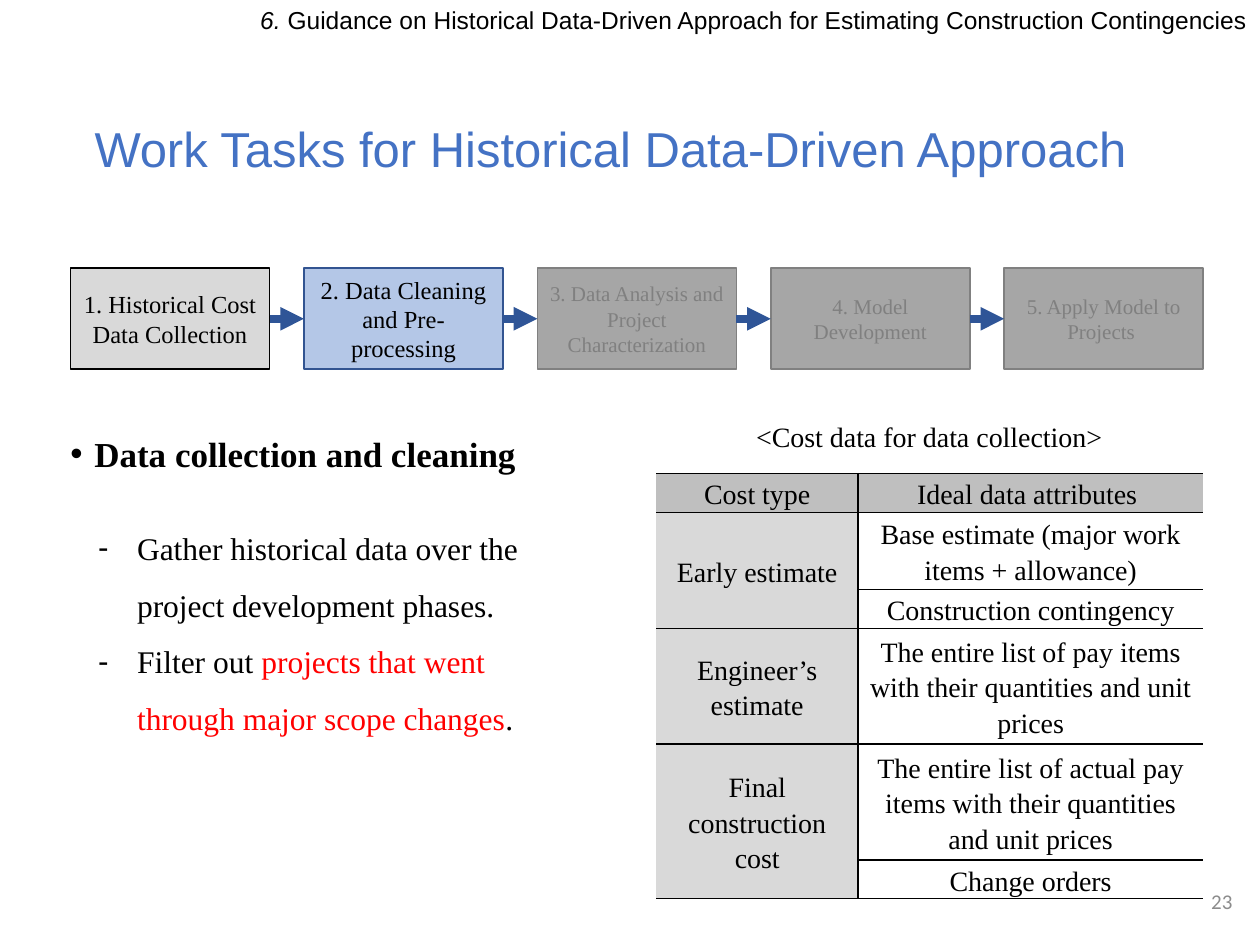
from lxml import etree
from pptx import Presentation
from pptx.dml.color import RGBColor
from pptx.enum.shapes import MSO_CONNECTOR, MSO_SHAPE
from pptx.enum.text import MSO_ANCHOR, MSO_AUTO_SIZE, PP_ALIGN
from pptx.oxml.ns import qn
from pptx.util import Inches, Pt

LEFT, CENTER, RIGHT = PP_ALIGN.LEFT, PP_ALIGN.CENTER, PP_ALIGN.RIGHT
TOP, MIDDLE = MSO_ANCHOR.TOP, MSO_ANCHOR.MIDDLE
SERIF = "Times New Roman"
BLACK, WHITE, RED = "000000", "FFFFFF", "FF0000"

# text, fill, outline, text colour, size
ACTIVE, PENDING = ("B4C7E7", "325491", BLACK, 14), ("A6A6A6", "808080", "808080", 12)
STEPS = [
    ("1. Historical Cost Data Collection", "D9D9D9", BLACK, BLACK, 14),
    ("2. Data Cleaning and Pre-processing", *ACTIVE),
    ("3. Data Analysis and Project Characterization", *PENDING),
    ("4. Model Development", *PENDING),
    ("5. Apply Model to Projects ", *PENDING),
]
# cost type (None continues the one above), attribute, row height
COST_ROWS = [
    ("Cost type", "Ideal data attributes ", 0.24),
    ("Early estimate", "Base estimate (major work items + allowance)", 0.5),
    (None, "Construction contingency", 0.24),
    ("Engineer’s estimate",
     "The entire list of pay items with their quantities and unit prices", 0.76),
    ("Final construction cost",
     "The entire list of actual pay items with their quantities and unit prices", 0.76),
    (None, "Change orders", 0.24),
]


def rgb(value):
    return RGBColor.from_string(value)


def style_run(run, size, color=BLACK, font=SERIF, bold=False, italic=False):
    run.font.size, run.font.name = Pt(size), font
    run.font.color.rgb = rgb(color)
    run.font.bold, run.font.italic = bold, italic


def write(paragraph, text, size, align=LEFT, **style):
    paragraph.text = text
    paragraph.alignment = align
    style_run(paragraph.runs[0], size, **style)


def add_bullet(paragraph, char, indent):
    props = paragraph._p.get_or_add_pPr()
    props.set("marL", str(Inches(indent)))
    props.set("indent", str(-Inches(indent)))
    etree.SubElement(props, qn("a:buFont")).set("typeface", "Arial")
    etree.SubElement(props, qn("a:buChar")).set("char", char)


def add_textbox(slide, box, anchor=TOP):
    frame = slide.shapes.add_textbox(*map(Inches, box)).text_frame
    frame.word_wrap = True
    frame.vertical_anchor = anchor
    return frame


def add_box(slide, box, fill, outline, width=1, anchor=MIDDLE):
    shape = slide.shapes.add_shape(MSO_SHAPE.RECTANGLE, *map(Inches, box))
    shape.shadow.inherit = False
    if fill:
        shape.fill.solid()
        shape.fill.fore_color.rgb = rgb(fill)
    else:
        shape.fill.background()
    shape.line.color.rgb = rgb(outline)
    shape.line.width = Pt(width)
    shape.text_frame.word_wrap = True
    shape.text_frame.vertical_anchor = anchor
    return shape


def add_header(slide, box):
    paragraph = add_textbox(slide, box).paragraphs[0]
    write(paragraph, "6. ", 14, RIGHT, font="Arial", italic=True)
    paragraph.line_spacing, paragraph.space_before = 0.9, Pt(10)
    section = paragraph.add_run()
    section.text = ("Guidance on Historical Data-Driven Approach "
                    "for Estimating Construction Contingencies")
    style_run(section, 14, font="Arial")


def add_title(slide, box):
    title = slide.shapes.title
    title.left, title.top, title.width, title.height = map(Inches, box)
    frame = title.text_frame
    frame.auto_size, frame.word_wrap = MSO_AUTO_SIZE.NONE, True
    frame.vertical_anchor = MIDDLE
    paragraph = frame.paragraphs[0]
    write(paragraph, "Work Tasks for Historical Data-Driven Approach", 28,
          color="4472C4", font="Arial")
    paragraph.line_spacing = 0.9


def add_arrow(slide, start, end, y):
    arrow = slide.shapes.add_connector(
        MSO_CONNECTOR.STRAIGHT, *map(Inches, (start, y, end, y)))
    arrow.line.color.rgb = rgb("2F5597")
    arrow.line.width = Pt(4.5)
    etree.SubElement(arrow.line._get_or_add_ln(), qn("a:tailEnd")).set("type", "triangle")
    etree.SubElement(arrow._element.spPr, qn("a:effectLst"))


def add_process(slide, box, step_width=1.58):
    left, top, width, height = box
    pitch = (width - step_width) / (len(STEPS) - 1)
    for i, (text, fill, outline, color, size) in enumerate(STEPS):
        x = left + i * pitch
        step = add_box(slide, (x, top, step_width, height), fill, outline)
        write(step.text_frame.paragraphs[0], text, size, CENTER, color=color)
        if i:
            add_arrow(slide, x - pitch + step_width, x, top + height / 2)


def add_tasks(slide, box):
    left, top, width, height = box
    heading = add_box(slide, (left, top, width, 0.44), WHITE, WHITE, 0.75, TOP)
    paragraph = heading.text_frame.paragraphs[0]
    write(paragraph, "Data collection and cleaning", 20, bold=True)
    add_bullet(paragraph, "•", 0.19)

    frame = add_textbox(slide, (left + 0.22, top + 0.62, width, height - 0.62))
    gather, screen = frame.paragraphs[0], frame.add_paragraph()
    write(gather, "Gather historical data over the project development phases.", 18)
    write(screen, "Filter out ", 18)
    for text, color in (("projects that went through major scope changes", RED),
                        (".", BLACK)):
        run = screen.add_run()
        run.text = text
        style_run(run, 18, color)
    for paragraph in (gather, screen):
        paragraph.line_spacing = 1.5
        add_bullet(paragraph, "-", 0.31)


def set_borders(cell, visible):
    props = cell._tc.get_or_add_tcPr()
    for side in "LRTB":
        line = etree.SubElement(props, qn(f"a:ln{side}"), w=str(Pt(1)))
        if side in visible:
            fill = etree.SubElement(line, qn("a:solidFill"))
            etree.SubElement(fill, qn("a:srgbClr")).set("val", BLACK)
        else:
            etree.SubElement(line, qn("a:noFill"))


def style_cell(cell, text, fill, borders):
    set_borders(cell, borders)
    if fill:
        cell.fill.solid()
        cell.fill.fore_color.rgb = rgb(fill)
    else:
        cell.fill.background()
    cell.margin_left = cell.margin_right = Inches(0.07)
    cell.margin_top = cell.margin_bottom = 0
    cell.vertical_anchor = MIDDLE
    if text:
        paragraph = cell.text_frame.paragraphs[0]
        write(paragraph, text, 16, CENTER)
        paragraph.line_spacing = 1.15
        paragraph.space_before = paragraph.space_after = Pt(3)


def add_cost_table(slide, box):
    left, top, width, _ = box
    caption = add_box(slide, (left + 0.28, top - 0.48, 3.77, 0.37), None, WHITE, 0.75, TOP)
    write(caption.text_frame.paragraphs[0], "<Cost data for data collection>", 16, CENTER)

    table = slide.shapes.add_table(len(COST_ROWS), 2, *map(Inches, box)).table
    table.first_row = table.horz_banding = False
    table.columns[0].width, table.columns[1].width = Inches(1.6), Inches(width - 1.6)
    for r, (cost_type, attribute, height) in enumerate(COST_ROWS):
        table.rows[r].height = Inches(height)
        type_fill, attribute_fill = ("D9D9D9", None) if r else ("BFBFBF", "BFBFBF")
        style_cell(table.cell(r, 0), cost_type, type_fill, "RTB")
        style_cell(table.cell(r, 1), attribute, attribute_fill, "LTB")
        if cost_type is None:
            table.cell(r - 1, 0).merge(table.cell(r, 0))


def add_page_number(slide, box):
    frame = add_textbox(slide, box, MIDDLE)
    write(frame.paragraphs[0], "23", 12, RIGHT, color="8C8C8C", font="Calibri")


def main():
    prs = Presentation()
    prs.slide_width, prs.slide_height = Inches(10), Inches(7.5)
    slide = prs.slides.add_slide(prs.slide_layouts[5])
    add_page_number(slide, (7.63, 6.95, 2.25, 0.4))
    add_title(slide, (0.65, 0.48, 8.62, 1.45))
    add_process(slide, (0.56, 2.13, 8.99, 0.8))
    add_cost_table(slide, (5.21, 3.76, 4.34, 3.23))
    add_tasks(slide, (0.46, 3.38, 3.96, 2.48))
    add_header(slide, (1.91, 0.02, 8.09, 0.4))
    prs.save("out.pptx")


if __name__ == "__main__":
    main()
